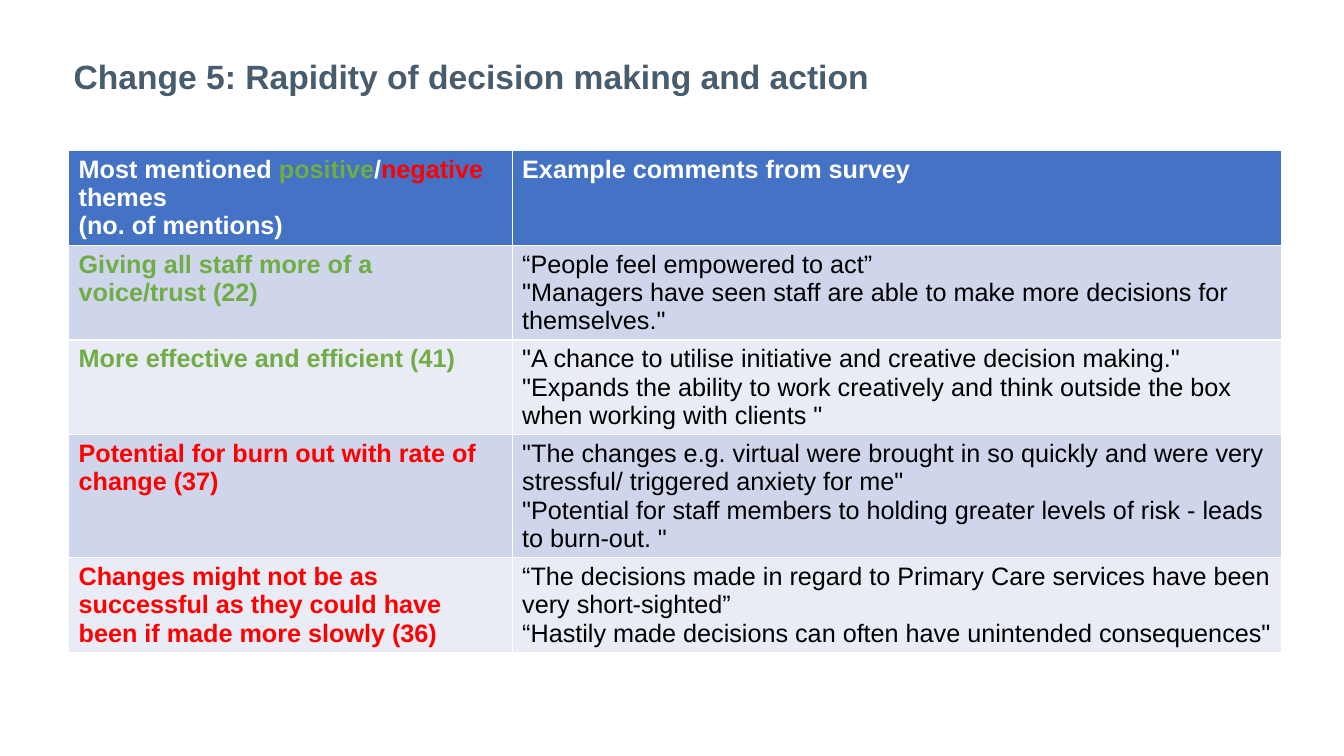
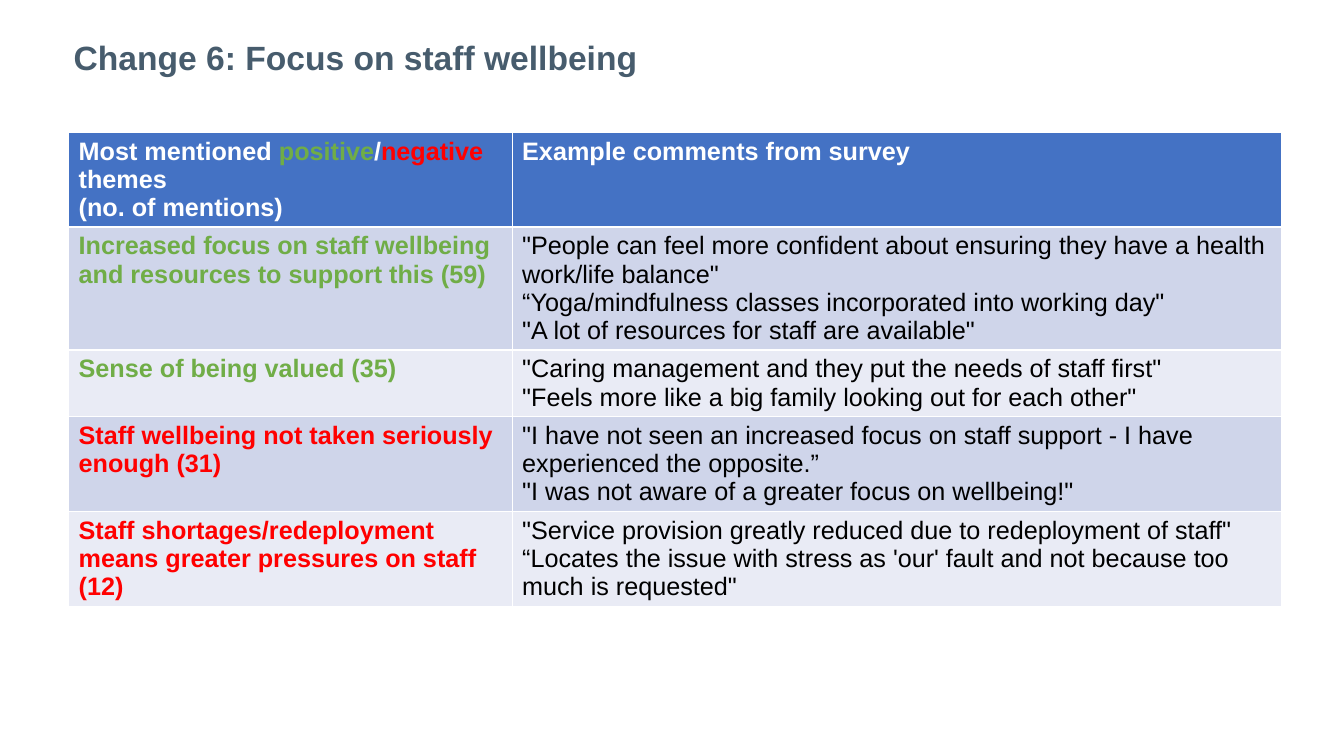
from pptx import Presentation
from pptx.dml.color import RGBColor
from pptx.enum.text import MSO_ANCHOR, MSO_AUTO_SIZE, PP_ALIGN
from pptx.util import Pt

SLATE = RGBColor(0x47, 0x5C, 0x6D)
HEADER_BLUE = RGBColor(0x44, 0x72, 0xC4)
BANDS = (RGBColor(0xCF, 0xD5, 0xEA), RGBColor(0xE9, 0xEB, 0xF5))
POSITIVE = RGBColor(0x70, 0xAD, 0x47)
NEGATIVE = RGBColor(0xFF, 0x00, 0x00)
WHITE = RGBColor(0xFF, 0xFF, 0xFF)
BLACK = RGBColor(0x00, 0x00, 0x00)

FONT = "Arial"
TITLE_ONLY = 5
TABLE_LEFT = 49
COLUMN_WIDTHS = (316.8, 549.4)
ROW_HEIGHT = 42

THEMES_HEADING = [
    [("Most mentioned ", WHITE), ("positive", POSITIVE), ("/", WHITE),
     ("negative", NEGATIVE), (" themes", WHITE)],
    [("(no. of mentions)", WHITE)],
]
COMMENTS_HEADING = [[("Example comments from survey", WHITE)]]

RAPIDITY_THEMES = [
    ("Giving all staff more of a voice/trust (22)", POSITIVE, [
        "“People feel empowered to act”",
        '"Managers have seen staff are able to make more decisions for themselves."']),
    ("More effective and efficient (41)", POSITIVE, [
        '"A chance to utilise initiative and creative decision making."',
        '"Expands the ability to work creatively and think outside the box '
        'when working with clients "']),
    ("Potential for burn out with rate of change (37)", NEGATIVE, [
        '"The changes e.g. virtual were brought in so quickly and were very '
        'stressful/ triggered anxiety for me"',
        '"Potential for staff members to holding greater levels of risk - '
        'leads to burn-out. "']),
    ("Changes might not be as successful as they could have been if made "
     "more slowly (36)", NEGATIVE, [
        "“The decisions made in regard to Primary Care services have been "
        "very short-sighted”",
        '“Hastily made decisions can often have unintended consequences"']),
]

WELLBEING_THEMES = [
    ("Increased focus on staff wellbeing and resources to support this (59)", POSITIVE, [
        '"People can feel more confident about ensuring they have a health '
        'work/life balance"',
        '“Yoga/mindfulness classes incorporated into working day"',
        '"A lot of resources for staff are available"']),
    ("Sense of being valued (35)", POSITIVE, [
        '"Caring management and they put the needs of staff first"',
        '"Feels more like a big family looking out for each other"']),
    ("Staff wellbeing not taken seriously enough (31)", NEGATIVE, [
        '"I have not seen an increased focus on staff support - I have '
        'experienced the opposite.”',
        '"I was not aware of a greater focus on wellbeing!"']),
    ("Staff shortages/redeployment means greater pressures on staff (12)", NEGATIVE, [
        '"Service provision greatly reduced due to redeployment of staff"',
        "“Locates the issue with stress as 'our' fault and not because too "
        'much is requested"']),
]


def style_font(font, size, color, bold):
    font.name = FONT
    font.size = Pt(size)
    font.color.rgb = color
    font.bold = bold


def set_title(slide, heading, bottom_inset):
    """Fill the title; a larger bottom inset lifts the centred line."""
    title = slide.shapes.title
    title.left, title.top = Pt(45.4), Pt(19.4)
    title.width, title.height = Pt(866.2), Pt(104.4)
    frame = title.text_frame
    frame.text = heading
    frame.word_wrap = True
    frame.auto_size = MSO_AUTO_SIZE.NONE
    frame.vertical_anchor = MSO_ANCHOR.MIDDLE
    frame.margin_bottom = Pt(bottom_inset)
    paragraph = frame.paragraphs[0]
    paragraph.alignment = PP_ALIGN.LEFT
    paragraph.line_spacing = 0.9
    style_font(paragraph.runs[0].font, 24, SLATE, True)


def fill_cell(cell, paragraphs, fill, bold):
    """Write paragraphs, each a list of (text, colour) pieces."""
    cell.fill.solid()
    cell.fill.fore_color.rgb = fill
    frame = cell.text_frame
    for index, pieces in enumerate(paragraphs):
        paragraph = frame.add_paragraph() if index else frame.paragraphs[0]
        for text, color in pieces:
            run = paragraph.add_run()
            run.text = text
            style_font(run.font, 18, color, bold)


def add_theme_table(slide, top, themes):
    row_count = len(themes) + 1
    table = slide.shapes.add_table(
        row_count, len(COLUMN_WIDTHS), Pt(TABLE_LEFT), Pt(top),
        Pt(sum(COLUMN_WIDTHS)), Pt(ROW_HEIGHT * row_count)).table
    for column, width in zip(table.columns, COLUMN_WIDTHS):
        column.width = Pt(width)
    for column, heading in enumerate((THEMES_HEADING, COMMENTS_HEADING)):
        fill_cell(table.cell(0, column), heading, HEADER_BLUE, True)
    for row, (theme, color, comments) in enumerate(themes, start=1):
        band = BANDS[(row - 1) % len(BANDS)]
        fill_cell(table.cell(row, 0), [[(theme, color)]], band, True)
        fill_cell(table.cell(row, 1), [[(comment, BLACK)] for comment in comments],
                  band, False)


def add_change_slide(deck, heading, title_inset, table_top, themes):
    slide = deck.slides.add_slide(deck.slide_layouts[TITLE_ONLY])
    set_title(slide, heading, title_inset)
    add_theme_table(slide, table_top, themes)


def main():
    deck = Presentation()
    deck.slide_width, deck.slide_height = Pt(960), Pt(540)
    add_change_slide(deck, "Change 5: Rapidity of decision making and action",
                     35, 107.5, RAPIDITY_THEMES)
    add_change_slide(deck, "Change 6: Focus on staff wellbeing",
                     61, 94.5, WELLBEING_THEMES)
    deck.save("out.pptx")


if __name__ == "__main__":
    main()
